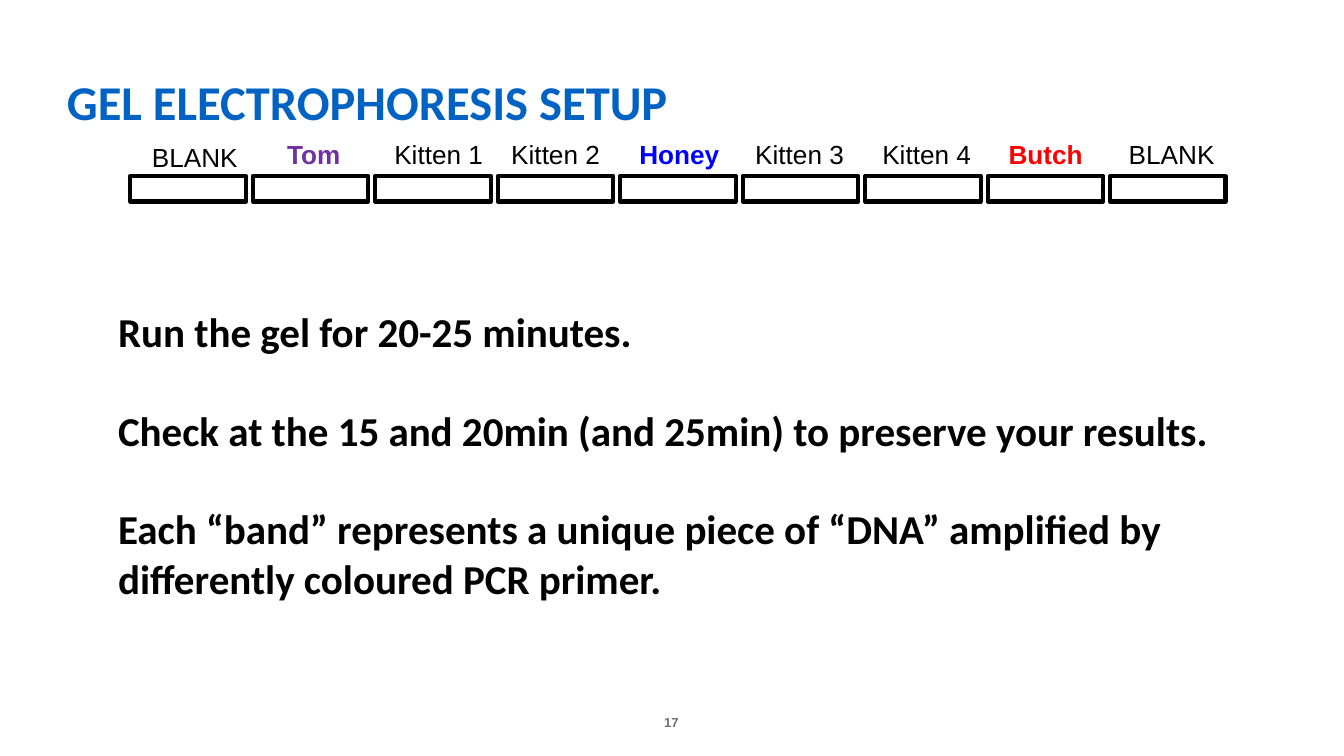
from pptx import Presentation
from pptx.dml.color import RGBColor
from pptx.enum.shapes import MSO_SHAPE
from pptx.enum.text import MSO_ANCHOR as ANCHOR, PP_ALIGN as ALIGN
from pptx.util import Inches, Pt

BLACK = RGBColor(0x00, 0x00, 0x00)
WHITE = RGBColor(0xFF, 0xFF, 0xFF)
TITLE_BLUE = RGBColor(0x00, 0x63, 0xC3)
PURPLE = RGBColor(0x70, 0x30, 0xA0)
BLUE = RGBColor(0x00, 0x00, 0xFF)
RED = RGBColor(0xFF, 0x00, 0x00)
GREY = RGBColor(0x71, 0x6F, 0x73)

prs = Presentation()
prs.slide_width = Inches(10)
prs.slide_height = Inches(10 * 9 / 16)
s = prs.slides.add_slide(prs.slide_layouts[6])


def add_text(text, x, y, w, h, size, font="Arial", color=BLACK, bold=False,
             align=ALIGN.LEFT, anchor=ANCHOR.TOP, inset_x=0.1, inset_y=0.1, gap=0):
    tf = s.shapes.add_textbox(Inches(x), Inches(y), Inches(w), Inches(h)).text_frame
    tf.word_wrap = True
    tf.vertical_anchor = anchor
    tf.margin_left = tf.margin_right = Inches(inset_x)
    tf.margin_top = tf.margin_bottom = Inches(inset_y)
    for i, line in enumerate(text.split("\n")):
        p = tf.add_paragraph() if i else tf.paragraphs[0]
        p.alignment = align
        if i:
            p.space_before = Pt(gap)
        r = p.add_run()
        r.text = line
        r.font.name = font
        r.font.size = Pt(size)
        r.font.bold = bold
        r.font.color.rgb = color


add_text("17", 4.54, 5.13, 0.91, 0.3, size=7, color=GREY, bold=True,
         align=ALIGN.CENTER, anchor=ANCHOR.BOTTOM, inset_x=0, inset_y=0)
add_text("GEL ELECTROPHORESIS SETUP", 0.4, 0.48, 9.2, 0.54, size=26, font="Calibri",
         color=TITLE_BLUE, bold=True, anchor=ANCHOR.BOTTOM, inset_y=0.05)

lanes = [
    ("BLANK", 1.02, 0.95, 0.86, BLACK, ALIGN.CENTER),
    ("Tom", 2, 0.93, 0.67, PURPLE, ALIGN.CENTER),
    ("Kitten 1", 2.75, 0.93, 1.03, BLACK, ALIGN.CENTER),
    ("Kitten 2", 3.62, 0.93, 1.03, BLACK, ALIGN.CENTER),
    ("Honey", 4.59, 0.93, 0.93, BLUE, ALIGN.CENTER),
    ("Kitten 3", 5.35, 0.93, 1.2, BLACK, ALIGN.CENTER),
    ("Kitten 4", 6.32, 0.93, 1.15, BLACK, ALIGN.CENTER),
    ("Butch", 7.34, 0.93, 0.88, RED, ALIGN.CENTER),
    ("BLANK", 8.3, 0.93, 0.88, BLACK, ALIGN.LEFT),
]
first_well, last_well = 0.97, 8.26
pitch = (last_well - first_well) / (len(lanes) - 1)
for i in range(len(lanes)):
    sp = s.shapes.add_shape(MSO_SHAPE.RECTANGLE, Inches(first_well + i * pitch),
                            Inches(1.31), Inches(0.86), Inches(0.19))
    sp.shadow.inherit = False
    sp.fill.solid()
    sp.fill.fore_color.rgb = WHITE
    sp.line.color.rgb = BLACK
    sp.line.width = Pt(2.25)

for name, x, y, w, color, align in lanes:
    add_text(name, x, y, w, 0.44, size=14, color=color, bold=color != BLACK,
             align=align, anchor=ANCHOR.MIDDLE)

add_text("Run the gel for 20-25 minutes.\n"
         "Check at the 15 and 20min (and 25min) to preserve your results.\n"
         "Each “band” represents a unique piece of “DNA” amplified by "
         "differently coloured PCR primer.",
         0.78, 2.18, 8.45, 2.42, size=22, font="Calibri", bold=True, gap=26.5)

prs.save("out.pptx")
